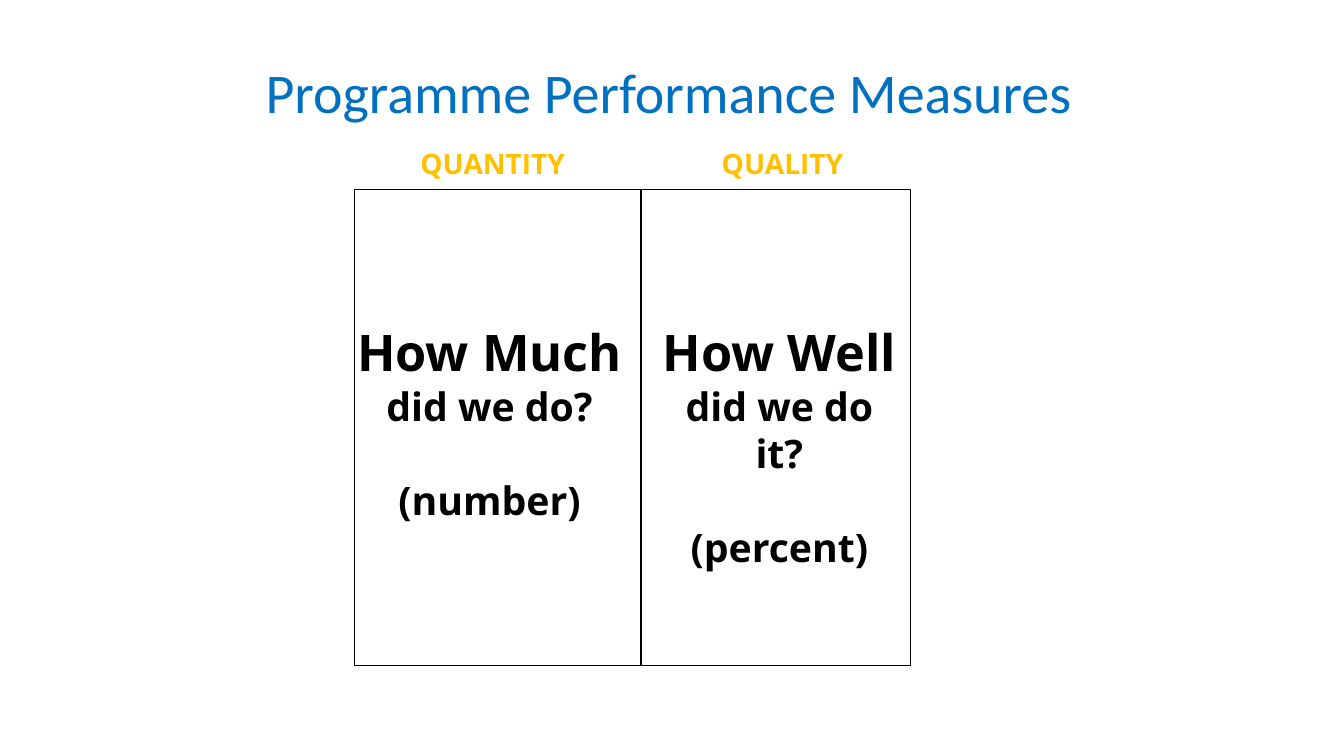
from pptx import Presentation
from pptx.dml.color import RGBColor
from pptx.enum.shapes import MSO_SHAPE
from pptx.enum.text import MSO_ANCHOR, PP_ALIGN
from pptx.util import Inches, Pt

RECTANGLE = MSO_SHAPE.RECTANGLE
MIDDLE = MSO_ANCHOR.MIDDLE
CENTER = PP_ALIGN.CENTER
LEFT = PP_ALIGN.LEFT
COLORS = {"title": "0070C0", "heading": "FFC000", "ink": "000000"}


def style_paragraph(para, font, size, color, bold, align):
    para.alignment = align
    for span in para.runs:
        span.font.name = font
        span.font.size = Pt(size)
        span.font.bold = bold
        span.font.color.rgb = RGBColor.from_string(COLORS[color])


def add_text_box(page, left, top, width, height, lines):
    box = page.shapes.add_textbox(Inches(left), Inches(top), Inches(width), Inches(height))
    box.text_frame.word_wrap = True
    box.text_frame.text = "\n".join(lines)
    return box.text_frame.paragraphs


deck = Presentation()
deck.slide_width = Inches(13.33)
deck.slide_height = Inches(7.5)
page = deck.slides.add_slide(deck.slide_layouts[5])

title = page.shapes.title
title.left, title.top = Inches(2.14), Inches(0.31)
title.width, title.height = Inches(8.98), Inches(1.18)
title.text_frame.text = "Programme Performance Measures"
title.text_frame.vertical_anchor = MIDDLE
style_paragraph(title.text_frame.paragraphs[0], "Calibri", 40, "title", False, CENTER)

for left, width in [(3.52, 2.84), (6.35, 2.68)]:
    panel = page.shapes.add_shape(RECTANGLE, Inches(left), Inches(1.88), Inches(width), Inches(4.72))
    panel.shadow.inherit = False
    panel.fill.background()
    panel.line.color.rgb = RGBColor.from_string(COLORS["ink"])
    panel.line.width = Pt(0.75)

for left, width, heading in [(4.07, 1.64, "QUANTITY"), (7.06, 1.43, "QUALITY")]:
    paragraphs = add_text_box(page, left, 1.4, width, 0.44, [heading])
    style_paragraph(paragraphs[0], "Open Sans", 20, "heading", True, LEFT)

questions = [
    (3.44, 2.83, 2.17, ["How Much", "did we do?", "(number)"]),
    (6.43, 2.6, 2.12, ["How Well", "did we do it?", "(percent)"]),
]
for left, width, height, lines in questions:
    paragraphs = add_text_box(page, left, 3.14, width, height, lines)
    for para, size in zip(paragraphs, [36, 28, 28]):
        style_paragraph(para, "Open Sans", size, "ink", True, CENTER)
    paragraphs[-1].space_before = Pt(33.6)

deck.save("out.pptx")
